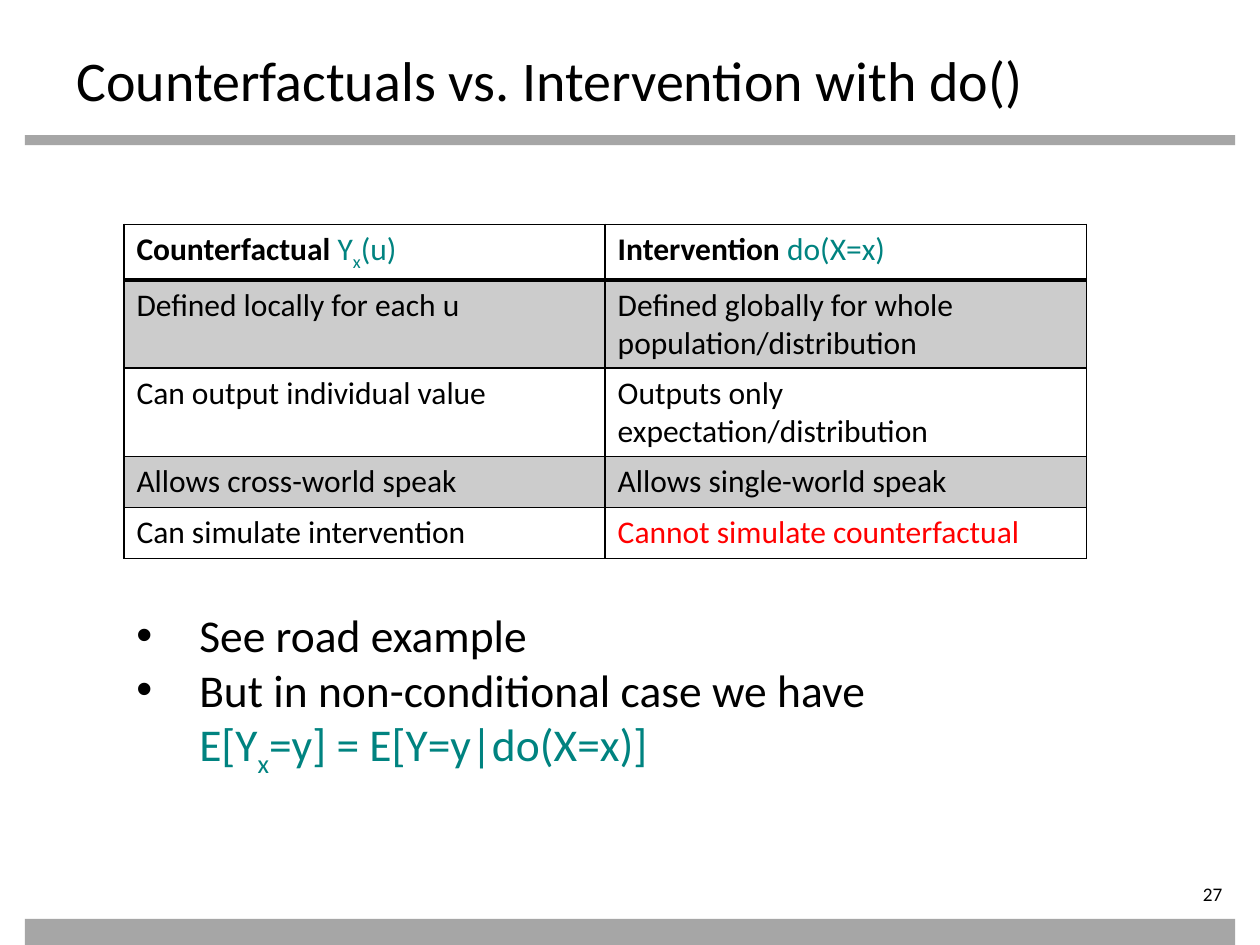
import pptx
import pptx.dml.color
import pptx.enum.shapes
import pptx.enum.text
import pptx.oxml
import pptx.oxml.ns
import pptx.util

Pt = pptx.util.Pt
FONT = "Calibri"
BLACK, TEAL, RED, GRAY = "000000", "008380", "FF0000", "A6A6A6"
SUBSCRIPT = {"color": TEAL, "baseline": -25000}

# Each cell is a list of (text, format) runs
TABLE_ROWS = [
    [[("Counterfactual ", {"bold": True}), ("Y", {"color": TEAL}), ("x", SUBSCRIPT), ("(u)", {"color": TEAL})],
     [("Intervention ", {"bold": True}), ("do(X=x)", {"color": TEAL})]],
    [[("Defined locally for each u", {})],
     [("Defined globally for whole population/distribution", {})]],
    [[("Can output individual value", {})],
     [("Outputs only expectation/distribution", {})]],
    [[("Allows cross-world speak", {})],
     [("Allows single-world speak", {})]],
    [[("Can simulate intervention", {})],
     [("Cannot simulate counterfactual", {"color": RED})]],
]
BULLETS = [
    [("See road example", {})],
    [("But in non-conditional case we have", {}), ("\n", {}), ("E[Y", {"color": TEAL}),
     ("x", SUBSCRIPT), ("=y] = E[Y=y|do(X=x)]", {"color": TEAL})],
]


def rgb(color):
    return pptx.dml.color.RGBColor.from_string(color)


def add_element(parent, xml, index=None):
    element = pptx.oxml.parse_xml(xml.replace(" ", f" {pptx.oxml.ns.nsdecls('a')} ", 1))
    parent.insert(len(parent) if index is None else index, element)


def write_runs(paragraph, runs, size):
    for text, style in runs:
        if text == "\n":
            paragraph.add_line_break()
            continue
        run = paragraph.add_run()
        run.text = text
        values = {"name": FONT, "size": Pt(size), "bold": style.get("bold", False)}
        for name, value in values.items():
            setattr(run.font, name, value)
        run.font.color.rgb = rgb(style.get("color", BLACK))
        if "baseline" in style:
            run.font._element.set("baseline", str(style["baseline"]))


def add_text_frame(slide, box, **values):
    frame = slide.shapes.add_textbox(*map(Pt, box)).text_frame
    for name, value in ({"word_wrap": True} | values).items():
        setattr(frame, name, value)
    return frame


def add_bar(slide, box):
    shape = slide.shapes.add_shape(pptx.enum.shapes.MSO_SHAPE.RECTANGLE, *map(Pt, box))
    shape.shadow.inherit = False
    shape.fill.solid()
    shape.fill.fore_color.rgb = rgb(GRAY)
    shape.line.fill.background()


def add_title(slide, box):
    frame = add_text_frame(slide, box, margin_top=Pt(6))
    write_runs(frame.paragraphs[0], [("Counterfactuals vs. Intervention with do()", {})], 32)


def add_page_number(slide, box):
    frame = add_text_frame(slide, box, margin_left=0, margin_top=0, margin_bottom=0)
    frame.paragraphs[0].alignment = pptx.enum.text.PP_ALIGN.RIGHT
    write_runs(frame.paragraphs[0], [("27", {})], 11)


def format_cell(cell, row):
    properties = cell._tc.get_or_add_tcPr()
    # Borders, thicker below the header
    widths = {"L": 1, "R": 1, "T": 2 if row == 1 else 1, "B": 2 if row == 0 else 1}
    for index, (side, width) in enumerate(widths.items()):
        add_element(
            properties,
            f'<a:ln{side} w="{Pt(width)}"><a:solidFill><a:srgbClr val="{BLACK}"/></a:solidFill></a:ln{side}>',
            index,
        )
    # Every second row is a translucent band
    if row % 2:
        cell.fill.solid()
        cell.fill.fore_color.rgb = rgb(BLACK)
        color = properties.find(".//" + pptx.oxml.ns.qn("a:solidFill") + "[last()]")
        color = properties.find(pptx.oxml.ns.qn("a:solidFill"))[0]
        add_element(color, '<a:alpha val="20000"/>')
    else:
        cell.fill.background()


def add_comparison_table(slide, box):
    table = slide.shapes.add_table(len(TABLE_ROWS), 2, *map(Pt, box)).table
    table.first_row = table.horz_banding = False
    for row, cells in enumerate(TABLE_ROWS):
        for column, runs in enumerate(cells):
            cell = table.cell(row, column)
            format_cell(cell, row)
            write_runs(cell.text_frame.paragraphs[0], runs, 18)


def add_bullets(slide, box):
    frame = add_text_frame(slide, box, word_wrap=False)
    for index, runs in enumerate(BULLETS):
        paragraph = frame.paragraphs[0] if index == 0 else frame.add_paragraph()
        properties = paragraph._p.get_or_add_pPr()
        for name, value in {"marL": Pt(36), "indent": -Pt(36)}.items():
            properties.set(name, str(value))
        add_element(properties, '<a:buFont typeface="Arial"/>')
        add_element(properties, '<a:buChar char="•"/>')
        paragraph.font.size = Pt(26)
        write_runs(paragraph, runs, 26)


def main():
    presentation = pptx.Presentation()
    presentation.slide_width, presentation.slide_height = Pt(720), Pt(540)
    slide = presentation.slides.add_slide(presentation.slide_layouts[6])

    # Rule below the title and bar at the foot
    add_bar(slide, (14.2, 77.2, 691.6, 5.8))
    add_bar(slide, (14.2, 525, 691.6, 15))

    # Content from top to bottom
    add_title(slide, (36.7, 20, 648, 39.6))
    add_comparison_table(slide, (70.8, 128.2, 550, 146))
    add_bullets(slide, (70.8, 343.5, 445.5, 101.5))
    add_page_number(slide, (626.4, 504, 79.2, 15.8))

    presentation.save("out.pptx")


if __name__ == "__main__":
    main()
